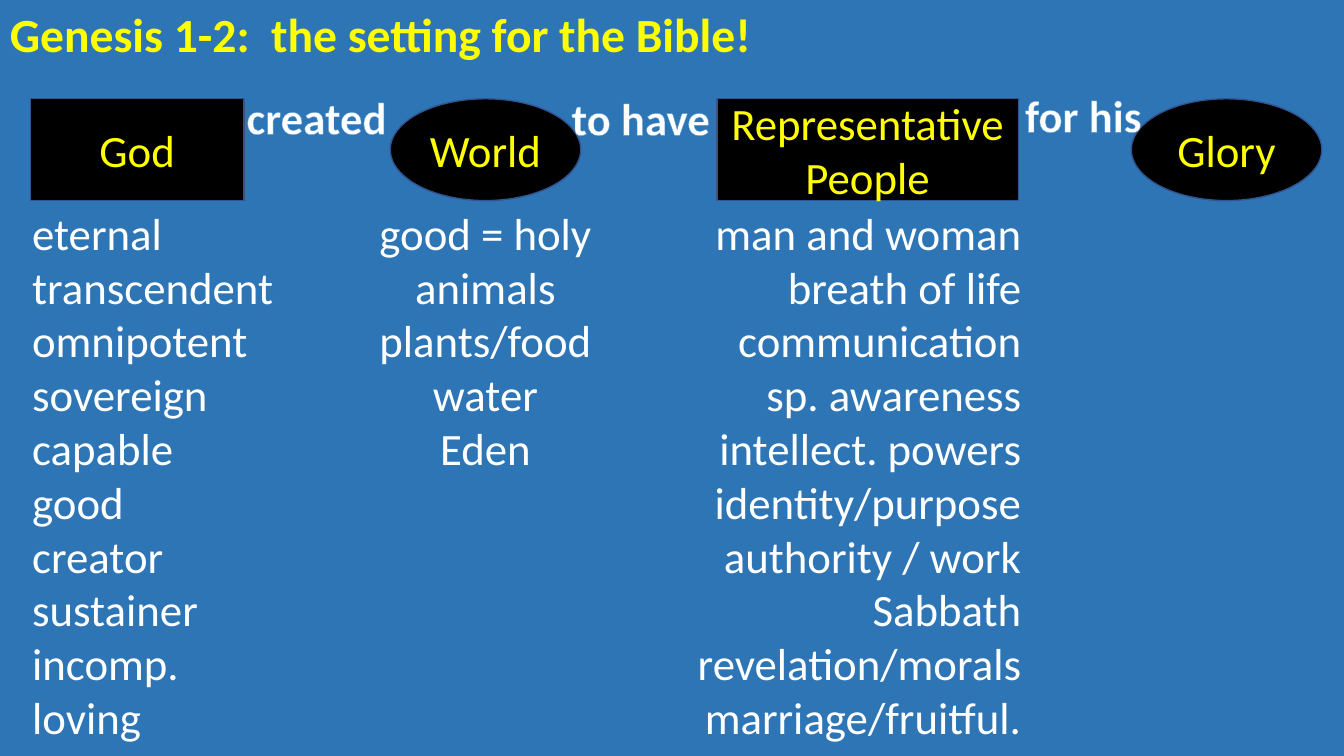
from lxml import etree
from pptx import Presentation
from pptx.dml.color import RGBColor
from pptx.enum.shapes import MSO_SHAPE as Preset
from pptx.enum.text import MSO_ANCHOR as Anchor
from pptx.enum.text import MSO_AUTO_SIZE as AutoSize
from pptx.enum.text import PP_ALIGN as Align
from pptx.oxml.ns import qn
from pptx.util import Inches, Pt

BLUE, BLACK, YELLOW, WHITE = "2E75B6", "000000", "FFFF00", "FFFFFF"
SHAPE_LINE, TEXT_OUTLINE = "325491", "5B9BD5"
CONCEPT_TOP, CONCEPT_HEIGHT = 0.98, 1.01
LIST_TOP = CONCEPT_TOP + CONCEPT_HEIGHT

# Concepts: preset, left, width, label
CONCEPTS = [
    (Preset.RECTANGLE, 0.3, 2.12, "God"),
    (Preset.RECTANGLE, 7.11, 2.99, "Representative People"),
    (Preset.OVAL, 3.87, 1.89, "World"),
    (Preset.OVAL, 11.22, 1.89, "Glory"),
]

# Linking words: left, top, width, wording
LINKS = [
    (2.34, 0.84, 1.6, "created"),
    (5.56, 0.85, 1.59, "to have"),
    (10.06, 0.82, 1.37, "for his"),
]

# Lists: left, width, height, alignment, items
LISTS = [
    (0.22, 2.62, 5.49, Align.LEFT,
     ["eternal", "transcendent", "omnipotent", "sovereign", "capable",
      "good", "creator", "sustainer", "incomp.", "loving"]),
    (3.61, 2.41, 2.79, Align.CENTER,
     ["good = holy", "animals", "plants/food", "water", "Eden"]),
    (6.8, 3.43, 5.49, Align.RIGHT,
     ["man and woman", "breath of life", "communication", "sp. awareness",
      "intellect. powers", "identity/purpose", "authority / work", "Sabbath",
      "revelation/morals", "marriage/fruitful."]),
]


def color(value):
    return RGBColor.from_string(value)


def write_lines(frame, lines, text_color, align, size=32, bold=False):
    for index, line in enumerate(lines):
        paragraph = frame.paragraphs[0] if index == 0 else frame.add_paragraph()
        paragraph.alignment = align
        run = paragraph.add_run()
        run.text = line
        run.font.name = "Calibri"
        run.font.size = Pt(size)
        run.font.bold = bold
        run.font.color.rgb = color(text_color)


def add_text(slide, box, lines, text_color=WHITE, align=Align.LEFT,
             size=32, bold=False, wrap=True):
    shape = slide.shapes.add_textbox(*[Inches(length) for length in box])
    frame = shape.text_frame
    frame.word_wrap = wrap
    frame.auto_size = AutoSize.SHAPE_TO_FIT_TEXT
    write_lines(frame, lines, text_color, align, size, bold)
    return shape


def outline_text(run):
    line = etree.Element(qn("a:ln"), w=str(Pt(0.8)))
    fill = etree.SubElement(line, qn("a:solidFill"))
    etree.SubElement(fill, qn("a:srgbClr"), val=TEXT_OUTLINE)
    run.font._element.insert(0, line)


def add_concept(slide, preset, left, width, label):
    shape = slide.shapes.add_shape(
        preset, Inches(left), Inches(CONCEPT_TOP),
        Inches(width), Inches(CONCEPT_HEIGHT))
    shape.shadow.inherit = False
    shape.fill.solid()
    shape.fill.fore_color.rgb = color(BLACK)
    shape.line.color.rgb = color(SHAPE_LINE)
    shape.line.width = Pt(1)
    frame = shape.text_frame
    frame.word_wrap = True
    frame.vertical_anchor = Anchor.MIDDLE
    write_lines(frame, [label], YELLOW, Align.CENTER)


def add_link(slide, left, top, width, wording):
    shape = add_text(slide, (left, top, width, 0.64), [wording],
                     align=Align.CENTER, bold=True, wrap=False)
    outline_text(shape.text_frame.paragraphs[0].runs[0])


def main():
    presentation = Presentation()
    presentation.slide_width = Inches(13.33)
    presentation.slide_height = Inches(7.5)
    slide = presentation.slides.add_slide(presentation.slide_layouts[6])
    slide.background.fill.solid()
    slide.background.fill.fore_color.rgb = color(BLUE)

    # Title
    add_text(slide, (0, 0, 8.1, 0.67),
             ["Genesis 1-2:  the setting for the Bible!"],
             YELLOW, size=34, bold=True)

    # Sentence of concepts and linking words
    for concept in CONCEPTS:
        add_concept(slide, *concept)
    for link in LINKS:
        add_link(slide, *link)

    # Lists below the concepts
    for left, width, height, align, items in LISTS:
        add_text(slide, (left, LIST_TOP, width, height), items, align=align)

    presentation.save("out.pptx")


if __name__ == "__main__":
    main()
